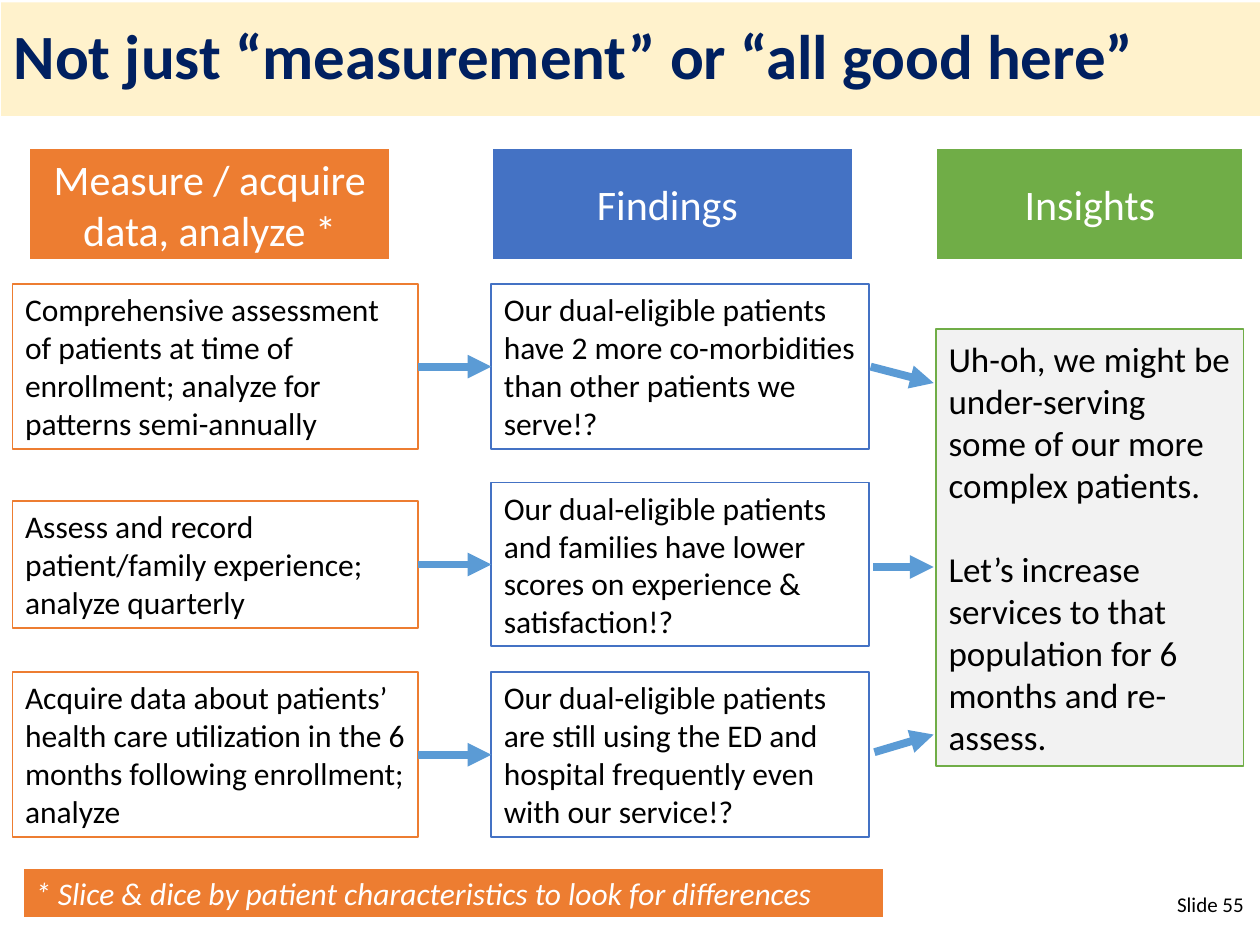
from lxml import etree
from pptx import Presentation
from pptx.dml.color import RGBColor
from pptx.enum.shapes import MSO_CONNECTOR, MSO_SHAPE
from pptx.enum.text import MSO_ANCHOR, PP_ALIGN
from pptx.oxml.ns import qn
from pptx.util import Emu, Pt

RECT, STRAIGHT = MSO_SHAPE.RECTANGLE, MSO_CONNECTOR.STRAIGHT
TOP, MIDDLE = MSO_ANCHOR.TOP, MSO_ANCHOR.MIDDLE
LEFT, CENTER, RIGHT = PP_ALIGN.LEFT, PP_ALIGN.CENTER, PP_ALIGN.RIGHT
PX = 9144  # 100 px to the inch
FONT = "Calibri"
WHITE, BLACK, NAVY, CREAM, GREY = "FFFFFF", "000000", "002060", "FFF2CC", "F2F2F2"
ORANGE, BLUE, GREEN, ARROW = "ED7D31", "4472C4", "70AD47", "5B9BD5"

# Content
TITLE = "Not just “measurement” or “all good here”"
HEADERS = [  # text, left, width, colour
    ("Measure / acquire data, analyze *", 23, 287, ORANGE),
    ("Findings ", 390, 287, BLUE),
    ("Insights", 743, 244, GREEN),
]
ROWS = [  # middle, (measure, height), (finding, height)
    (291,
     ("Comprehensive assessment of patients at time of enrollment; "
      "analyze for patterns semi-annually", 131),
     ("Our dual-eligible patients have 2 more co-morbidities than other "
      "patients we serve!?", 131)),
    (448,
     ("Assess and record patient/family experience; analyze quarterly", 101),
     ("Our dual-eligible patients and families have lower scores on "
      "experience & satisfaction!?", 130)),
    (599,
     ("Acquire data about patients’ health care utilization in the 6 months "
      "following enrollment; analyze", 131),
     ("Our dual-eligible patients are still using the ED and hospital "
      "frequently even with our service!?", 131)),
]
INSIGHTS = [
    "Uh-oh, we might be under-serving some of our more complex patients.",
    "Let’s increase services to that population for 6 months and re-assess.",
]
FOOTNOTE = "* Slice & dice by patient characteristics to look for differences"
PAGE_LABEL = "Slide 55"

COLUMNS = [(10, 322, ORANGE), (390, 300, BLUE)]  # left, width, line colour
INSIGHT_ARROWS = [(691, 291, 741, 304), (693, 450, 741, 450), (694, 597, 741, 583)]


def px(value):
    return Emu(round(value * PX))


def rgb(value):
    return RGBColor.from_string(value)


def write(box, paragraphs, size=18, color=BLACK, bold=False, italic=False,
          align=LEFT, anchor=TOP, gap=0, spacing=None):
    frame = box.text_frame
    frame.word_wrap = True
    frame.vertical_anchor = anchor
    for index, text in enumerate(paragraphs):
        para = frame.add_paragraph() if index else frame.paragraphs[0]
        para.alignment = align
        if index and gap:
            para.space_before = Pt(gap)
        if spacing:
            para.line_spacing = spacing
        span = para.add_run()
        span.text = text
        font = span.font
        font.name, font.size = FONT, Pt(size)
        font.bold, font.italic = bold, italic
        font.color.rgb = rgb(color)


def add_box(page, place, paragraphs, fill, line=None, weight=1, **text_format):
    box = page.shapes.add_shape(RECT, *map(px, place))
    box.shadow.inherit = False
    box.fill.solid()
    box.fill.fore_color.rgb = rgb(fill)
    if line:
        box.line.color.rgb = rgb(line)
        box.line.width = Pt(weight)
    else:
        box.line.fill.background()
    write(box, paragraphs, **text_format)


def add_arrow(page, ends):
    arrow = page.shapes.add_connector(STRAIGHT, *map(px, ends))
    arrow.line.color.rgb = rgb(ARROW)
    arrow.line.width = Pt(4.5)
    etree.SubElement(arrow.line._get_or_add_ln(), qn("a:tailEnd"), type="triangle")
    etree.SubElement(arrow._element.spPr, qn("a:effectLst"))


def main():
    deck = Presentation()
    deck.slide_width, deck.slide_height = px(1000), px(750)
    page = deck.slides.add_slide(deck.slide_layouts[6])

    # Title band
    add_box(page, (1, 2, 999, 90), [TITLE], CREAM, size=36, color=NAVY,
            bold=True, anchor=MIDDLE, spacing=0.9)

    # Column headers
    for text, left, width, color in HEADERS:
        add_box(page, (left, 117, width, 90), [text], color, WHITE, 1.5,
                size=24, color=WHITE, align=CENTER, anchor=MIDDLE)

    # Insights panel
    add_box(page, (743, 261, 244, 347), INSIGHTS, GREY, GREEN,
            size=20, anchor=MIDDLE, gap=24)

    # Measures and findings, centred on each row
    for middle, *cells in ROWS:
        for (text, height), (left, width, color) in zip(cells, COLUMNS):
            add_box(page, (left, middle - height / 2, width, height), [text],
                    WHITE, color)

    # Arrows
    measure_right = COLUMNS[0][0] + COLUMNS[0][1]
    for middle, *_ in ROWS:
        add_arrow(page, (measure_right, middle, COLUMNS[1][0], middle))
    for ends in INSIGHT_ARROWS:
        add_arrow(page, ends)

    # Footnote and slide number
    add_box(page, (18, 689, 684, 40), [FOOTNOTE], ORANGE, WHITE, 1.5,
            color=WHITE, italic=True)
    label = page.shapes.add_textbox(*map(px, (772, 703, 225, 40)))
    write(label, [PAGE_LABEL], size=12, align=RIGHT)

    deck.save("out.pptx")


if __name__ == "__main__":
    main()
